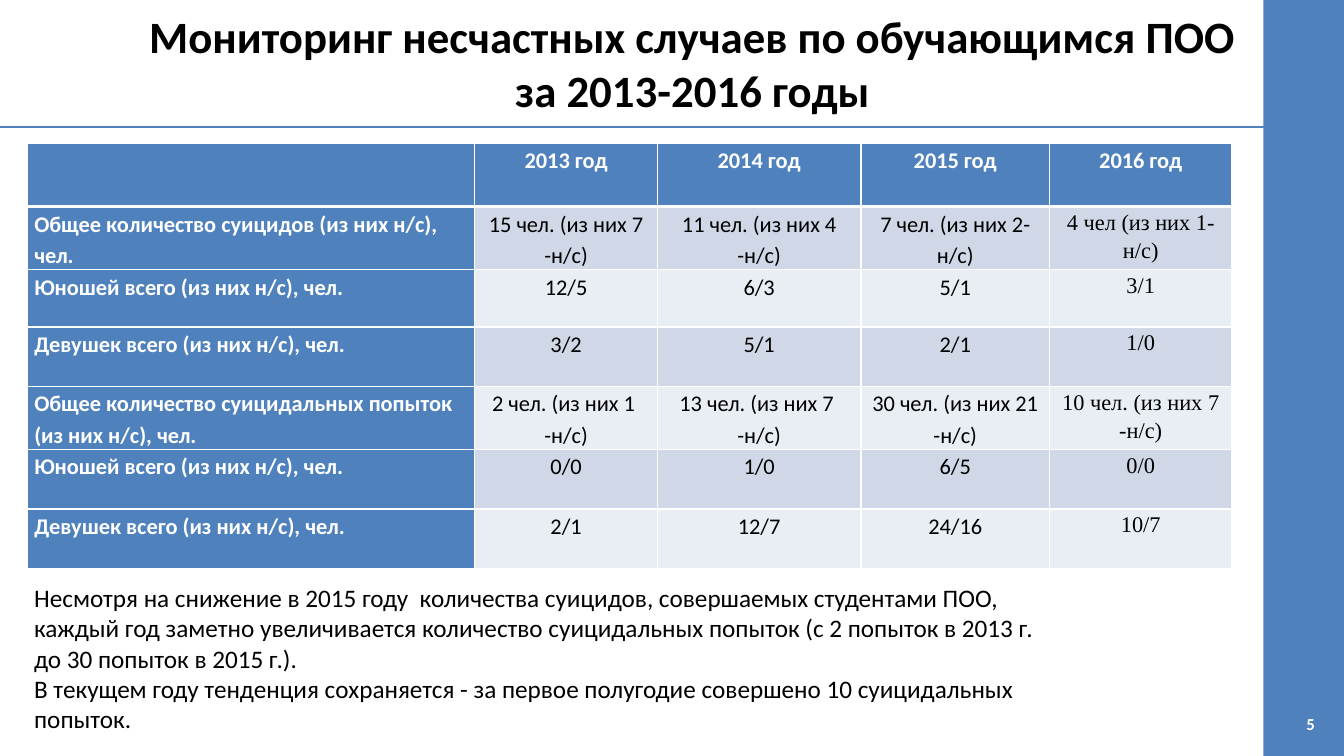
from lxml.etree import SubElement
from pptx import Presentation
from pptx.dml.color import RGBColor
from pptx.enum.shapes import MSO_CONNECTOR, MSO_SHAPE
from pptx.enum.text import MSO_ANCHOR, MSO_AUTO_SIZE, PP_ALIGN
from pptx.oxml import parse_xml
from pptx.oxml.ns import nsdecls, qn
from pptx.util import Inches, Pt

WIDTH, HEIGHT = 13.33, 7.5
SIDEBAR_LEFT = 0.94 * WIDTH
BLUE, WHITE, BLACK = "4F81BD", "FFFFFF", "000000"
BANDS = ["D0D8E8", "E9EDF4"]
COLUMN_WIDTHS = [4.44, 1.81, 2.02, 1.87, 1.81]
ROW_HEIGHTS = [0.63, 0.52, 0.57] + [0.59] * 4

TITLE = "Мониторинг несчастных случаев по обучающимся ПОО за 2013-2016 годы"
BOYS = "Юношей всего (из них н/с), чел."
GIRLS = "Девушек всего (из них н/с), чел."
ROWS = [
    ["", "2013 год", "2014 год", "2015 год", "2016 год"],
    ["Общее количество суицидов (из них н/с), чел.", "15 чел. (из них 7 -н/с)",
     "11 чел. (из них 4 -н/с)", "7 чел. (из них 2-н/с)", "4 чел (из них 1- н/с)"],
    [BOYS, "12/5", "6/3", "5/1", "3/1"],
    [GIRLS, "3/2", "5/1", "2/1", "1/0"],
    ["Общее количество суицидальных попыток (из них н/с), чел.",
     "2 чел. (из них 1 \n-н/с)", "13 чел. (из них 7 \n-н/с)",
     "30 чел. (из них 21 -н/с)", "10 чел. (из них 7 -н/с)"],
    [BOYS, "0/0", "1/0", "6/5", "0/0"],
    [GIRLS, "2/1", "12/7", "24/16", "10/7"],
]
CONCLUSIONS = [
    "Несмотря на снижение в 2015 году  количества суицидов, совершаемых студентами ПОО, "
    "каждый год заметно увеличивается количество суицидальных попыток "
    "(с 2 попыток в 2013 г. до 30 попыток в 2015 г.).",
    "В текущем году тенденция сохраняется - за первое полугодие совершено "
    "10 суицидальных попыток.",
]


def color(hex_value):
    return RGBColor.from_string(hex_value)


def box(left, top, width, height):
    return [Inches(length) for length in (left, top, width, height)]


def write(paragraph, text, size, hex_value=BLACK, bold=False, align=PP_ALIGN.LEFT,
          name="Calibri"):
    paragraph.text = text
    paragraph.alignment = align
    for key, value in {"size": Pt(size), "bold": bold, "name": name}.items():
        setattr(paragraph.font, key, value)
    paragraph.font.color.rgb = color(hex_value)


def add_frame(slide):
    """Rule under the title and the sidebar on the right."""
    rule = slide.shapes.add_connector(
        MSO_CONNECTOR.STRAIGHT, *box(0, 1.26, WIDTH, 1.26))
    rule.line.color.rgb = color(BLUE)
    rule.line.width = Pt(0.75)
    SubElement(rule._element.spPr, qn("a:effectLst"))

    sidebar = slide.shapes.add_shape(
        MSO_SHAPE.RECTANGLE, *box(SIDEBAR_LEFT, 0, WIDTH - SIDEBAR_LEFT, HEIGHT))
    sidebar.shadow.inherit = False
    sidebar.fill.solid()
    sidebar.fill.fore_color.rgb = color(BLUE)
    sidebar.line.fill.background()


def add_title(slide, left, top, width, height):
    title = slide.shapes.title
    title.left, title.top, title.width, title.height = box(left, top, width, height)
    frame = title.text_frame
    frame.auto_size = MSO_AUTO_SIZE.NONE
    frame.vertical_anchor = MSO_ANCHOR.MIDDLE
    write(frame.paragraphs[0], TITLE, 32, bold=True, align=PP_ALIGN.CENTER)


def set_borders(cell, widths):
    """Borders come before the fill among the cell properties."""
    properties = cell._tc.get_or_add_tcPr()
    for position, (side, width) in enumerate(widths.items()):
        properties.insert(position, parse_xml(
            f'<a:ln{side} {nsdecls("a")} w="{Pt(width)}"><a:solidFill>'
            f'<a:srgbClr val="{WHITE}"/></a:solidFill></a:ln{side}>'))


def format_cell(cell, text, row, column):
    header, label = row == 0, column == 0
    accent = header or label
    cell.fill.solid()
    cell.fill.fore_color.rgb = color(BLUE if accent else BANDS[(row - 1) % 2])
    margins = {"margin_left": 0.07, "margin_right": 0.07,
               "margin_top": 0, "margin_bottom": 0}
    for key, value in margins.items():
        setattr(cell, key, Inches(value))
    set_borders(cell, {"L": 1, "R": 1, "T": 3 if row == 1 else 1, "B": 3 if header else 1})

    paragraph = cell.text_frame.paragraphs[0]
    last = column == len(COLUMN_WIDTHS) - 1
    write(paragraph, text, 16, WHITE if accent else BLACK, accent,
          PP_ALIGN.LEFT if label else PP_ALIGN.CENTER,
          "Times New Roman" if last and not header else "Calibri")
    paragraph.line_spacing = 1.15


def add_statistics(slide, left, top):
    table = slide.shapes.add_table(
        len(ROWS), len(COLUMN_WIDTHS),
        *box(left, top, sum(COLUMN_WIDTHS), sum(ROW_HEIGHTS))).table
    for column, width in zip(table.columns, COLUMN_WIDTHS):
        column.width = Inches(width)
    for row, height in zip(table.rows, ROW_HEIGHTS):
        row.height = Inches(height)
    for row, texts in enumerate(ROWS):
        for column, text in enumerate(texts):
            format_cell(table.cell(row, column), text, row, column)


def add_text_box(slide, left, top, width, height):
    frame = slide.shapes.add_textbox(*box(left, top, width, height)).text_frame
    frame.word_wrap = True
    return frame


def add_page_number(slide, left, top, width, height):
    frame = add_text_box(slide, left, top, width, height)
    frame.vertical_anchor = MSO_ANCHOR.MIDDLE
    write(frame.paragraphs[0], "5", 12, WHITE, True, PP_ALIGN.RIGHT)


def add_conclusions(slide, left, top, width, height):
    frame = add_text_box(slide, left, top, width, height)
    for index, text in enumerate(CONCLUSIONS):
        paragraph = frame.add_paragraph() if index else frame.paragraphs[0]
        write(paragraph, text, 18)


def main():
    presentation = Presentation()
    presentation.slide_width = Inches(WIDTH)
    presentation.slide_height = Inches(HEIGHT)
    slide = presentation.slides.add_slide(presentation.slide_layouts[5])
    add_frame(slide)
    add_title(slide, 1.21, 0.14, 11.32, 0.96)
    add_statistics(slide, 0.27, 1.42)
    add_page_number(slide, 10.03, 6.98, 3.11, 0.4)
    add_conclusions(slide, 0.24, 5.73, 10.11, 1.62)
    presentation.save("out.pptx")


if __name__ == "__main__":
    main()
